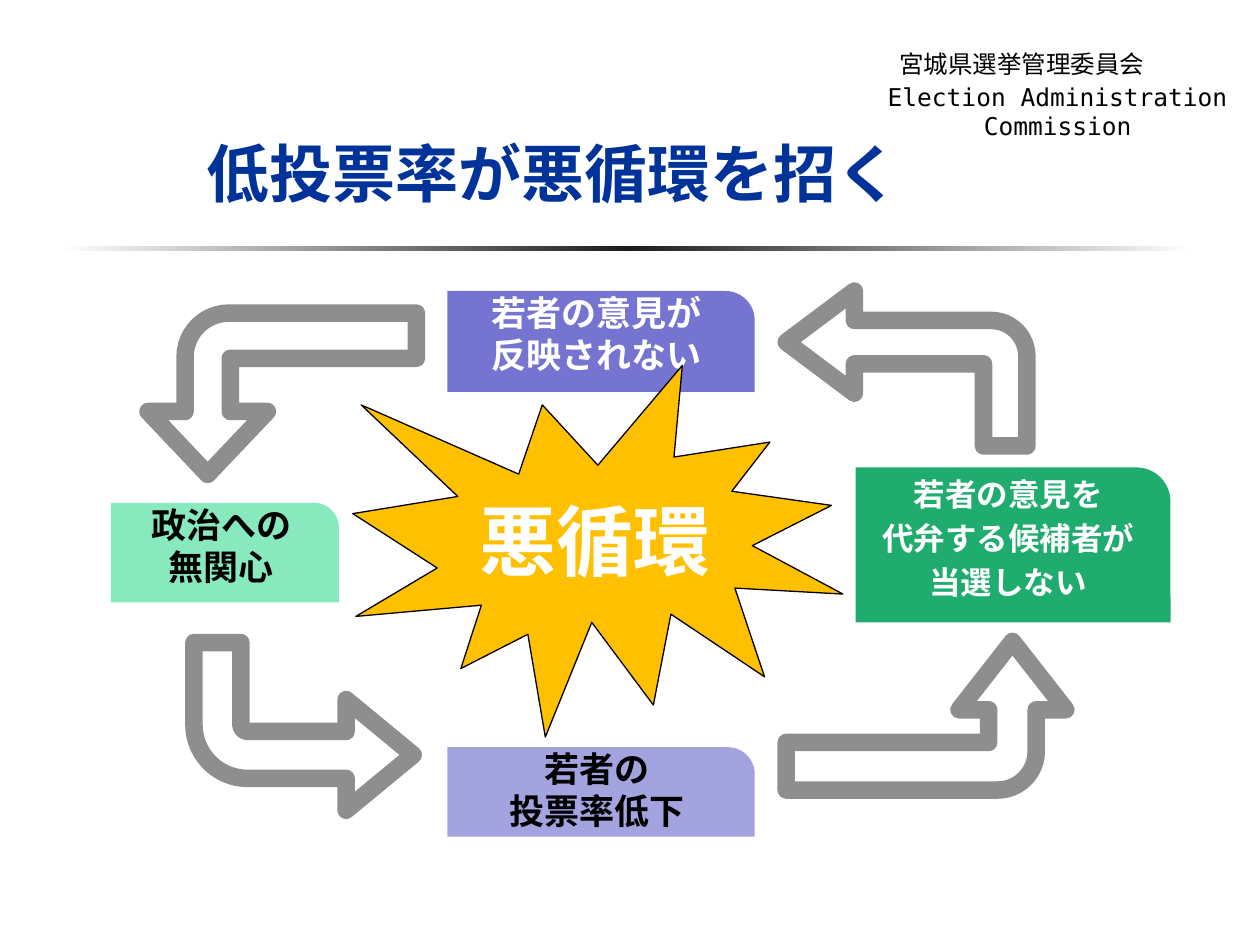
import copy
import dataclasses

import pptx
import pptx.dml.color
import pptx.enum.shapes
import pptx.enum.text
import pptx.oxml.ns
import pptx.util
from lxml import etree

SHAPES = pptx.enum.shapes.MSO_SHAPE
ALIGN = pptx.enum.text.PP_ALIGN
ANCHOR = pptx.enum.text.MSO_ANCHOR


@dataclasses.dataclass(frozen=True)
class Theme:
    """Colours, fonts and type sizes of the slide."""
    black: str = "000000"
    white: str = "FFFFFF"
    title: str = "003399"
    rule: str = "1C1C1C"
    arrow: str = "8E8E8E"
    burst: str = "FFC000"
    mint: str = "88E9BE"
    green: str = "20AC6F"
    lavender: str = "A3A3E0"
    violet: str = "7575D1"
    japanese: str = "Noto Sans CJK JP"
    mono: str = "DejaVu Sans Mono"
    latin: str = "Roboto"
    header_size: int = 14
    small_size: int = 18
    step_size: int = 20
    title_size: int = 36
    burst_size: int = 44


THEME = Theme()


def px(length):
    """Turn px, 100 to the inch, into EMU."""
    return pptx.util.Emu(length * 9144)


def rgb(colour):
    """Return a colour object for a hex string."""
    return pptx.dml.color.RGBColor.from_string(colour)


def write(shape, text, size, colour, font=THEME.japanese, bold=True, align=ALIGN.CENTER,
          insets=(0, 0, 0, 0), anchor=ANCHOR.TOP, wrap=True, line_height=None):
    """Write and format the text of a shape."""
    frame = shape.text_frame
    frame.text = text
    frame.word_wrap = wrap
    frame.auto_size = pptx.enum.text.MSO_AUTO_SIZE.NONE
    frame.vertical_anchor = anchor
    frame.margin_left, frame.margin_top, frame.margin_right, frame.margin_bottom = map(px, insets)
    for index, paragraph in enumerate(frame.paragraphs):
        paragraph.alignment = align
        paragraph.space_before = pptx.util.Pt(size * 0.2 if index else 0)
        if line_height:
            paragraph.line_spacing = pptx.util.Pt(line_height)
        for run in paragraph.runs:
            run.font.size = pptx.util.Pt(size)
            run.font.bold = bold
            run.font.name = font
            run.font.color.rgb = rgb(colour)
            east_asian = etree.SubElement(run.font._element, pptx.oxml.ns.qn("a:ea"))
            east_asian.set("typeface", THEME.japanese)


def add_plain_shape(slide, kind, box, fill=None, adjustments=()):
    """Add a preset shape without line or shadow."""
    shape = slide.shapes.add_shape(kind, *map(px, box))
    shape.shadow.inherit = False
    shape.line.fill.background()
    if fill:
        shape.fill.solid()
        shape.fill.fore_color.rgb = rgb(fill)
    else:
        shape.fill.background()
    for index, value in enumerate(adjustments):
        shape.adjustments[index] = value
    return shape


def add_header(slide, box):
    """Add the commission's name in two languages."""
    left, top, width, height = box
    insets = (10, 5, 10, 5)
    names = (
        ("宮城県選挙管理委員会", THEME.japanese, (left + 3, top, 228, 34)),
        ("Election Administration Commission", THEME.mono, (left, top + 26, width, height - 26)),
    )
    for text, font, name_box in names:
        name = slide.shapes.add_textbox(*map(px, name_box))
        write(name, text, THEME.header_size, THEME.black, font, False, insets=insets)


def add_title(slide, box):
    """Place the title and the faded rule below it."""
    left, top, width, height = box
    title = slide.shapes.title
    title.left, title.top, title.width, title.height = map(px, (left, top, width, height))
    write(title, "低投票率が悪循環を招く", THEME.title_size, THEME.title,
          align=ALIGN.LEFT, insets=(10, 8, 0, 0), line_height=43)
    rule = add_plain_shape(slide, SHAPES.RECTANGLE, (left - 106, top + 96, 900, 4))
    rule.fill.gradient()
    rule.fill.gradient_angle = 0
    first = rule.fill.gradient_stops[0]._gs
    first.addnext(copy.deepcopy(first))
    for stop, position, colour in zip(rule.fill.gradient_stops, (0, 0.5, 1),
                                      (THEME.white, THEME.rule, THEME.white)):
        stop.position = position
        stop.color.rgb = rgb(colour)


def add_step(slide, box, text, fill, colour, corner, size=THEME.step_size, line_height=20):
    """Add one step of the cycle."""
    step = add_plain_shape(slide, SHAPES.ROUND_1_RECTANGLE, box, fill, (corner,))
    write(step, text, size, colour, insets=(0, 6, 0, 0), line_height=line_height)


def add_arrow(slide, box, rotation, adjustments):
    """Add a mirrored bent arrow with a thick round outline."""
    arrow = add_plain_shape(slide, SHAPES.BENT_ARROW, box, adjustments=adjustments)
    arrow.rotation = rotation
    arrow._element.spPr.find(pptx.oxml.ns.qn("a:xfrm")).set("flipH", "1")
    arrow.line.color.rgb = rgb(THEME.arrow)
    arrow.line.width = pptx.util.Pt(10)
    etree.SubElement(arrow.line._ln, pptx.oxml.ns.qn("a:round"))


def add_burst(slide, box):
    """Add the burst in the middle of the cycle."""
    burst = add_plain_shape(slide, SHAPES.EXPLOSION1, box, THEME.burst)
    burst.line.color.rgb = rgb(THEME.black)
    burst.line.width = pptx.util.Pt(0.75)
    write(burst, "悪循環", THEME.burst_size, THEME.white, THEME.latin,
          insets=(10, 5, 10, 5), anchor=ANCHOR.MIDDLE, wrap=False)


def add_cycle(slide, box):
    """Add the steps, the arrows between them and the burst."""
    left, top, width, height = box

    def within(x, y, part_width, part_height):
        """Place a part relative to the cycle."""
        return left + x, top + y, part_width, part_height

    middle = 267
    steps = (
        (within(0, 193, 181, 79), "政治への\n無関心", THEME.mint, THEME.black, 0.25),
        (within(middle, height - 71, 244, 71), "若者の\n投票率低下",
         THEME.lavender, THEME.black, 0.3),
        (within(width - 250, 165, 250, 123), "若者の意見を\n代弁する候補者が\n当選しない",
         THEME.green, THEME.white, 0.22, THEME.small_size, 21.6),
        (within(middle, 25, 244, 80), "若者の意見が\n反映されない", THEME.violet, THEME.white, 0.29),
    )
    for step in steps:
        add_step(slide, *step)
    arrows = (
        (within(66, 304, 174, 133), 180, (0.28, 0.33, 0.4, 0.32)),
        (within(588, 251, 118, 222), 90, (0.32, 0.36, 0.46, 0.26)),
        (within(72, 0, 128, 213), 270, (0.28, 0.37, 0.39, 0.27)),
        (within(536, 25, 191, 123), 0, (0.28, 0.33, 0.44, 0.23)),
    )
    for arrow in arrows:
        add_arrow(slide, *arrow)
    add_burst(slide, within(192, 84, 389, 295))


def main():
    """Build and save the slide."""
    presentation = pptx.Presentation()
    presentation.slide_width, presentation.slide_height = px(1000), px(750)
    slide = presentation.slides.add_slide(presentation.slide_layouts[5])
    add_header(slide, (694, 34, 291, 60))
    add_title(slide, (154, 99, 646, 79))
    add_cycle(slide, (88, 206, 841, 458))
    presentation.save("out.pptx")


if __name__ == "__main__":
    main()
